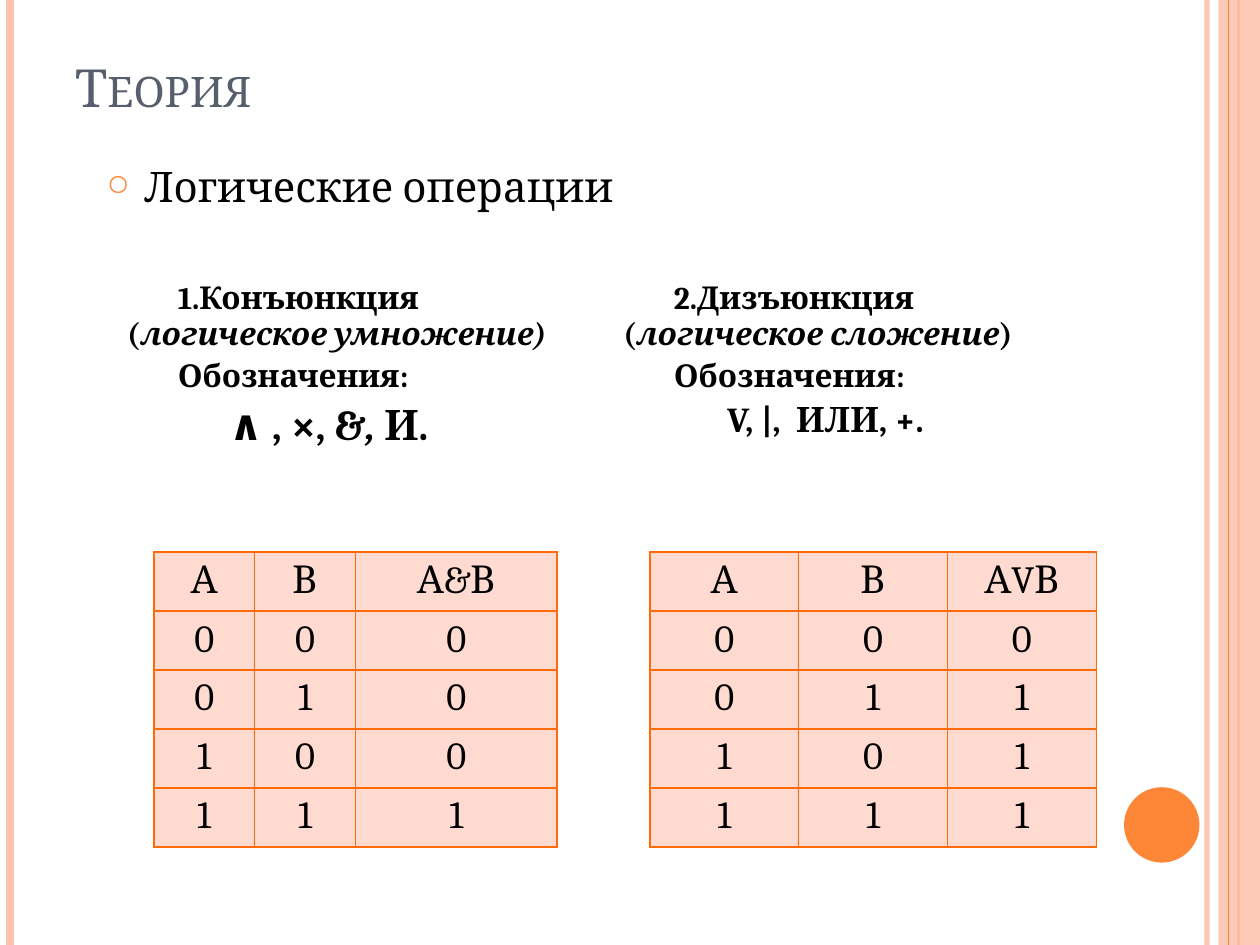
from lxml import etree
from pptx import Presentation
from pptx import util as u
from pptx.dml import color
from pptx.enum import shapes, text
from pptx.oxml import ns

FONT = "Cambria"
ORANGE, PINK, BLACK = "FE8637", "FEC3AE", "000000"


def rgb(code):
    return color.RGBColor.from_string(code)


def add(node, tag, **attrs):
    return etree.SubElement(node, ns.qn(tag), attrs)


def fade(part, level):
    for fill in part.iter(ns.qn("a:srgbClr")):
        add(fill, "a:alpha", val=str(level * 1000))


def style(run, size, tone=BLACK, bold=False, slant=False):
    font = run.font
    font.name, font.size = FONT, u.Pt(size)
    font.bold, font.italic = bold, slant
    font.color.rgb = rgb(tone)


def stripe(slide, x, y, h, tone, width):
    line = slide.shapes.add_connector(
        shapes.MSO_CONNECTOR.STRAIGHT, u.Cm(x), u.Cm(y), u.Cm(x), u.Cm(y + h))
    line.line.color.rgb = rgb(tone)
    line.line.width = u.Pt(width)
    add(line._element.spPr, "a:effectLst")
    return line


def solid(slide, kind, x, y, w, h, tone):
    part = slide.shapes.add_shape(kind, u.Cm(x), u.Cm(y), u.Cm(w), u.Cm(h))
    part.shadow.inherit = False
    part.fill.solid()
    part.fill.fore_color.rgb = rgb(tone)
    part.line.fill.background()
    return part


def frame(slide, x, y, w, h):
    right = x + w
    fade(stripe(slide, right - 1.07, y, h, PINK, 3)._element.spPr, 93)
    stripe(slide, x + 0.2, y, h, PINK, 4.5)
    stripe(slide, right - 0.43, y, h, ORANGE, 1.5)
    band = solid(slide, shapes.MSO_SHAPE.RECTANGLE, right - 0.84, y, 0.84, h, PINK)
    fade(band._element.spPr, 87)
    stripe(slide, right - 0.64, y, h, ORANGE, 0.75)
    solid(slide, shapes.MSO_SHAPE.OVAL, right - 2.74, y + h - 3.18, 1.52, 1.52, ORANGE)


def label(slide, x, y, w, h, words):
    box = slide.shapes.add_textbox(u.Cm(x), u.Cm(y), u.Cm(w), u.Cm(h))
    box.text_frame.word_wrap = True
    box.text_frame.text = words
    return box.text_frame


def title(slide, x, y, w, h):
    body = label(slide, x, y, w, h, "Теория")
    body.vertical_anchor = text.MSO_ANCHOR.BOTTOM
    run = body.paragraphs[0].runs[0]
    style(run, 30, "575F6D")
    run.font._element.set("cap", "small")


def topic(slide, x, y, w, h):
    para = label(slide, x, y, w, h, "Логические операции").paragraphs[0]
    para.space_before = u.Pt(6)
    style(para.runs[0], 24)
    props = para._p.get_or_add_pPr()
    props.set("marL", str(u.Cm(0.76)))
    props.set("indent", str(u.Cm(-0.76)))
    add(add(props, "a:buClr"), "a:srgbClr", val=ORANGE)
    add(props, "a:buSzPct", val="70000")
    add(props, "a:buChar", char="○")


def table(slide, x, y, w, h, shares, count):
    item = slide.shapes.add_table(
        count, len(shares), u.Cm(x), u.Cm(y), u.Cm(w), u.Cm(h)).table
    item.first_row = item.horz_banding = False
    for col, share in zip(item.columns, shares):
        col.width = u.Cm(w * share / sum(shares))
    for row in item.rows:
        row.height = u.Cm(h / count)
    return item


def paint(cell, tone):
    cell.fill.solid()
    cell.fill.fore_color.rgb = rgb(tone)


def edge(cell, tone, width):
    props = cell._tc.get_or_add_tcPr()
    for side in "LRTB":
        line = add(props, f"a:ln{side}", w=str(u.Pt(width)))
        add(add(line, "a:solidFill"), "a:srgbClr", val=tone)


def terms(slide, x, y, w, h, notes):
    item = table(slide, x, y, w, h, [1] * len(notes), 1)
    for cell, paras in zip(item.rows[0].cells, notes):
        paint(cell, "FFFFFF")
        for i, (indent, size, runs) in enumerate(paras):
            body = cell.text_frame
            para = body.add_paragraph() if i else body.paragraphs[0]
            para.alignment = text.PP_ALIGN.JUSTIFY
            para.space_before = u.Pt(round(size / 6) if i else 0)
            para._p.get_or_add_pPr().set("indent", str(u.Cm(indent)))
            for words, slant in runs:
                run = para.add_run()
                run.text = words
                style(run, size, bold=True, slant=slant)


def truth(slide, x, y, w, h, shares, head, results):
    rows = [["А", "В", head]]
    rows += [[str(i // 2), str(i % 2), res] for i, res in enumerate(results)]
    item = table(slide, x, y, w, h, shares, len(rows))
    for row, words in zip(item.rows, rows):
        for cell, word in zip(row.cells, words):
            edge(cell, "FF6B0A", 1)
            paint(cell, "FFDAD0")
            cell.text_frame.text = word
            para = cell.text_frame.paragraphs[0]
            para.alignment = text.PP_ALIGN.CENTER
            style(para.runs[0], 22)


def main():
    deck = Presentation()
    deck.slide_width, deck.slide_height = u.Cm(25.4), u.Cm(19.05)
    slide = deck.slides.add_slide(deck.slide_layouts[6])
    signs = (1.02, 18, [("Обозначения:", False)])
    notes = [
        [(1.02, 18, [("1.Конъюнкция (", False), ("логическое умножение)", True)]),
         signs,
         (2.05, 24, [("∧ , ×, &", False), (", ", True), ("И.", False)])],
        [(1.02, 18, [("2.Дизъюнкция (", False), ("логическое сложение", True),
                     (")", False)]),
         signs,
         (2.1, 20, [("V, |,  ИЛИ, +.", False)])],
    ]
    frame(slide, 0, 0, 25.4, 19.05)
    title(slide, 1.27, 0.76, 20.75, 1.75)
    topic(slide, 1.9, 3.12, 21.2, 15.2)
    truth(slide, 3.1, 11.13, 8.13, 5.94, [1, 1, 2], "А&В", "0001")
    terms(slide, 2.31, 5.54, 20, 4.6, notes)
    truth(slide, 13.1, 11.13, 9, 5.94, [1, 1, 1], "АVВ", "0111")
    deck.save("out.pptx")


if __name__ == "__main__":
    main()
